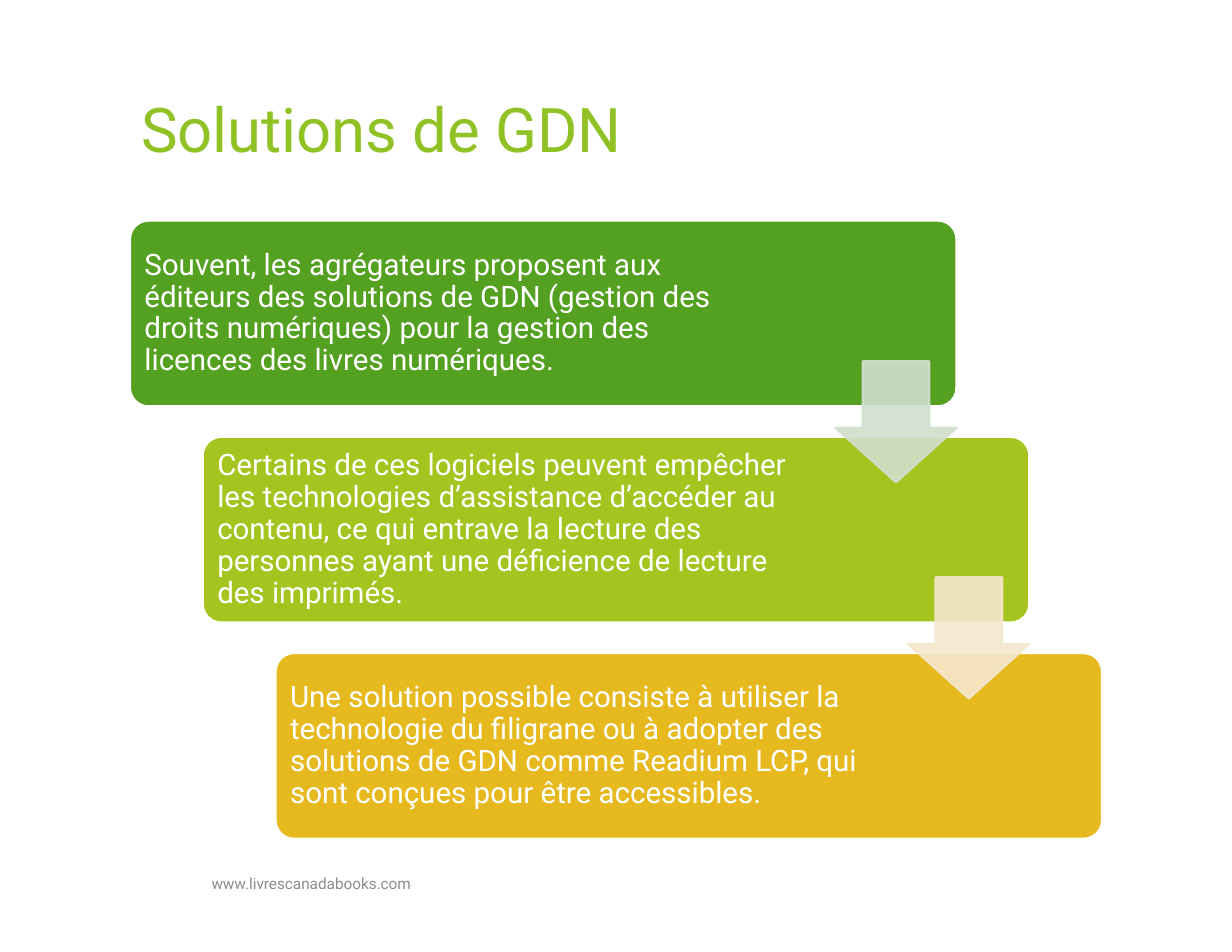
from dataclasses import dataclass

import pptx
import pptx.dml.color
import pptx.enum.shapes
import pptx.enum.text
import pptx.oxml
import pptx.oxml.ns
import pptx.util

Pt = pptx.util.Pt
Shapes = pptx.enum.shapes.MSO_SHAPE
Anchor = pptx.enum.text.MSO_ANCHOR

FONT = "Roboto"
WHITE = "FFFFFF"
CARD_WIDTH, CARD_HEIGHT = 531.4, 119.5
CARD_LEFT, CARD_TOP = 83.5, 141.8
STEP_RIGHT, STEP_DOWN = 46.8, 139
CARD_PADDING = 3.6
TEXT_WIDTH = 400
ARROW_SIZE = 77.8
ARROW_RIGHT, ARROW_DOWN = 453.6, 90.4  # offset from the card above


@dataclass
class Step:
    text: str
    fill: str
    arrow: str = ""  # colour of the arrow to the next step


STEPS = [
    Step("Souvent, les agrégateurs proposent aux éditeurs des solutions de GDN "
         "(gestion des droits numériques) pour la gestion des licences des "
         "livres numériques.", "54A021", "D1DFCD"),
    Step("Certains de ces logiciels peuvent empêcher les technologies "
         "d’assistance d’accéder au contenu, ce qui entrave la lecture des "
         "personnes ayant une déficience de lecture des imprimés.",
         "A5C41F", "F5E7CD"),
    Step("Une solution possible consiste à utiliser la technologie du filigrane "
         "ou à adopter des solutions de GDN comme Readium LCP, qui sont conçues "
         "pour être accessibles.", "E6B91E"),
]


def paint(color_format, color: str, opacity: int = 100) -> None:
    """Fill a fill format with a hex colour and an opacity in percent."""
    color_format.solid()
    color_format.fore_color.rgb = pptx.dml.color.RGBColor.from_string(color)
    if opacity < 100:
        element = color_format._xPr.find(".//" + pptx.oxml.ns.qn("a:srgbClr"))
        alpha = pptx.oxml.parse_xml(
            f'<a:alpha {pptx.oxml.ns.nsdecls("a")} val="{opacity * 1000}"/>')
        element.append(alpha)


def write(box, text: str, *, size: float, color: str, anchor=Anchor.MIDDLE,
          inset: float | None = None, line_spacing: float = 1.0,
          space_after: float = 0) -> None:
    """Put one formatted paragraph in a box."""
    frame = box.text_frame
    frame.word_wrap = True
    frame.auto_size = pptx.enum.text.MSO_AUTO_SIZE.NONE
    frame.vertical_anchor = anchor
    if inset is not None:
        frame.margin_left = frame.margin_right = Pt(inset)
        frame.margin_top = frame.margin_bottom = Pt(inset)
    para = frame.paragraphs[0]
    para.alignment = pptx.enum.text.PP_ALIGN.LEFT
    para.line_spacing = line_spacing
    para.space_before = Pt(0)
    para.space_after = Pt(space_after)
    span = para.add_run()
    span.text = text
    span.font.name = FONT
    span.font.size = Pt(size)
    paint(span.font.fill, color)


def place(box, left: float, top: float, width: float, height: float) -> None:
    box.left, box.top = Pt(left), Pt(top)
    box.width, box.height = Pt(width), Pt(height)


def add_block(page, kind, bounds: tuple, adjustments: list[float], fill: str,
              outline: str, opacity: int = 100) -> None:
    """Draw a filled preset shape without shadow."""
    block = page.shapes.add_shape(kind, *map(Pt, bounds))
    block.shadow.inherit = False
    for index, value in enumerate(adjustments):
        block.adjustments[index] = value
    paint(block.fill, fill, opacity)
    block.line.width = Pt(1.5)
    paint(block.line.fill, outline, opacity)


def add_card(page, step: Step, left: float, top: float) -> None:
    add_block(page, Shapes.ROUNDED_RECTANGLE,
              (left, top, CARD_WIDTH, CARD_HEIGHT), [0.1], step.fill, WHITE)
    box = page.shapes.add_textbox(
        Pt(left + CARD_PADDING), Pt(top + CARD_PADDING),
        Pt(TEXT_WIDTH), Pt(CARD_HEIGHT - 2 * CARD_PADDING))
    write(box, step.text, size=19, color=WHITE, inset=5.76,
          line_spacing=0.9, space_after=6.65)


def add_arrow(page, step: Step, left: float, top: float) -> None:
    add_block(page, Shapes.DOWN_ARROW,
              (left + ARROW_RIGHT, top + ARROW_DOWN, ARROW_SIZE, ARROW_SIZE),
              [0.55, 0.45], step.arrow, step.arrow, opacity=90)


def main() -> None:
    deck = pptx.Presentation()
    deck.slide_width, deck.slide_height = Pt(792), Pt(612)
    page = deck.slides.add_slide(deck.slide_layouts.get_by_name("Title Only"))

    # Title
    title = page.shapes.title
    place(title, 83.5, 54.7, 662.4, 97.9)
    write(title, "Solutions de GDN", size=39.6, color="90C226",
          anchor=Anchor.TOP)

    # Footer
    footer = page.shapes.add_textbox(Pt(128.9), Pt(551.5), Pt(409), Pt(32.4))
    write(footer, "www.livrescanadabooks.com", size=9.9, color="8C8C8C",
          space_after=6)

    # Staircase of cards, with the arrows on top
    corners = [(CARD_LEFT + i * STEP_RIGHT, CARD_TOP + i * STEP_DOWN)
               for i in range(len(STEPS))]
    for step, corner in zip(STEPS, corners):
        add_card(page, step, *corner)
    for step, corner in zip(STEPS, corners):
        if step.arrow:
            add_arrow(page, step, *corner)

    deck.save("out.pptx")


if __name__ == "__main__":
    main()
